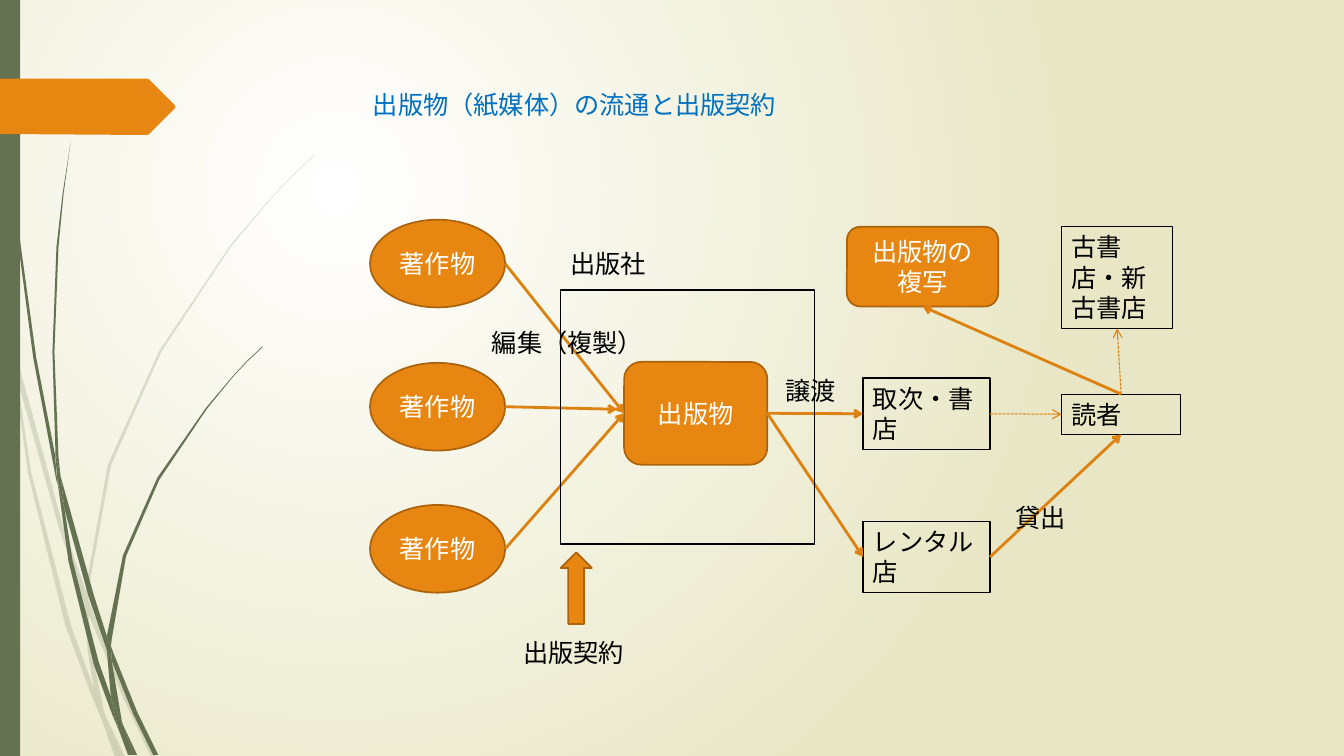
from dataclasses import dataclass
from typing import Optional

import pptx
import pptx.dml.color
import pptx.enum.lang
import pptx.enum.shapes
import pptx.enum.text
import pptx.oxml
import pptx.oxml.ns
import pptx.util

PX = 9144  # EMU per px, 100 px to the inch
FONT = "League Spartan"
GREEN, ORANGE, RUST, ARROW = "647252", "E78712", "AB640D", "DD8111"
BLACK, WHITE, BLUE = "000000", "FFFFFF", "0070C0"
SHAPE = pptx.enum.shapes.MSO_SHAPE
TOP, LEFT, BOTTOM, RIGHT = range(4)
Points = list[tuple[int, int]]


@dataclass
class Node:
    key: str
    text: str
    at: tuple[int, int, int, int]
    kind: Optional[SHAPE] = None  # None gives an outlined text box


@dataclass
class Link:
    start: str
    start_side: int
    end: str
    end_side: int
    dashed: bool = False
    stop: Optional[tuple[int, int]] = None  # free end short of the node


@dataclass
class Label:
    text: str
    at: tuple[int, int, int, int]
    color: str = BLACK


# Blades of grass, split into segments
PALE_BLADES: list[Points] = [
    [(11, 350), (9, 322), (0, 282), (0, 299), (10, 344)],
    [(58, 522), (84, 599), (85, 586), (62, 520), (14, 345), (17, 376)],
    [(92, 607), (88, 596), (88, 610), (123, 694), (150, 751), (155, 751), (127, 692)],
    [(119, 751), (124, 751), (105, 711)],
    [(93, 683), (70, 619), (31, 469), (17, 376), (11, 350), (28, 470), (65, 621),
     (92, 693), (101, 714), (99, 707)],
    [(84, 599), (87, 646), (93, 683), (96, 692), (105, 711), (103, 706), (91, 646),
     (88, 610), (88, 608)],
    [(88, 584), (110, 462), (160, 349), (229, 245), (268, 198), (290, 175), (312, 154),
     (312, 153), (289, 175), (268, 197), (228, 244), (158, 348), (107, 461), (85, 584),
     (85, 586), (88, 596)],
    [(101, 714), (114, 751), (119, 751)],
    [(88, 608), (88, 610), (88, 596), (85, 586), (84, 599)],
    [(96, 692), (93, 683), (99, 707), (101, 714), (119, 751), (105, 711)],
]
DARK_BLADES: list[Points] = [
    [(7, 110), (17, 233), (33, 355), (56, 477), (57, 481), (55, 457), (55, 453),
     (36, 355), (19, 232), (8, 109), (5, 48), (4, 0), (3, 0), (4, 48)],
    [(88, 592), (106, 645), (106, 633), (106, 631), (93, 590), (60, 472), (64, 505)],
    [(113, 649), (110, 641), (111, 656), (132, 708), (152, 749), (157, 749), (136, 706)],
    [(110, 691), (98, 657), (72, 556), (64, 505), (57, 477), (68, 557), (93, 659),
     (111, 708), (117, 722), (116, 717)],
    [(60, 472), (58, 453), (54, 349), (58, 245), (63, 193), (70, 141), (70, 141),
     (62, 193), (56, 245), (52, 349), (55, 449)],
    [(133, 749), (136, 749), (122, 719)],
    [(57, 477), (64, 505), (60, 472), (55, 449), (55, 453)],
    [(111, 633), (125, 552), (158, 476), (205, 406), (231, 374), (245, 359), (261, 344),
     (260, 344), (245, 358), (231, 373), (204, 405), (156, 474), (122, 551), (106, 631),
     (110, 641)],
    [(117, 722), (127, 749), (131, 749)],
    [(106, 645), (110, 691), (116, 706), (122, 719), (121, 716), (111, 656), (109, 651)],
    [(106, 645), (109, 651), (111, 656), (110, 641), (106, 631), (106, 633)],
    [(116, 706), (110, 691), (116, 717), (117, 722), (130, 749), (133, 749), (122, 719)],
]
PAGE_TAG: Points = [(0, 78), (146, 78), (148, 79), (173, 104), (174, 106), (173, 108),
                    (148, 133), (146, 134), (0, 133)]

NODES = [
    *(Node(f"work{i}", "著作物", (367, round(218 + 141.5 * i), 134, 87), SHAPE.OVAL)
      for i in range(3)),
    Node("publication", "出版物", (619, 359, 142, 102), SHAPE.ROUNDED_RECTANGLE),
    Node("bookshop", "取次・書店", (856, 375, 126, 71)),
    Node("reader", "読者", (1053, 391, 118, 40)),
    Node("used", "古書店・新古書店", (1053, 225, 110, 101)),
    Node("copying", "出版物の複写", (840, 225, 150, 79), SHAPE.ROUNDED_RECTANGLE),
    Node("rental", "レンタル店", (856, 517, 126, 71)),
]
LINKS = [
    Link("work0", RIGHT, "publication", LEFT),
    Link("work1", RIGHT, "publication", LEFT, stop=(612, 406)),
    Link("work2", RIGHT, "publication", LEFT),
    Link("publication", RIGHT, "bookshop", LEFT),
    Link("publication", RIGHT, "rental", LEFT),
    Link("bookshop", RIGHT, "reader", LEFT, dashed=True),
    Link("rental", RIGHT, "reader", BOTTOM),
    Link("reader", TOP, "used", BOTTOM, dashed=True),
    Link("reader", TOP, "copying", BOTTOM),
]
LABELS = [
    Label("編集（複製）", (478, 320, 181, 40)),
    Label("譲渡", (769, 367, 87, 40)),
    Label("貸出", (997, 493, 126, 40)),
    Label("出版契約", (509, 627, 165, 40)),
    Label("出版社", (556, 241, 157, 40)),
    Label("出版物（紙媒体）の流通と出版契約", (360, 84, 535, 40), BLUE),
]


def rgb(color: str) -> pptx.dml.color.RGBColor:
    return pptx.dml.color.RGBColor.from_string(color)


def emu(lengths: tuple[int, ...]) -> list[int]:
    return [length * PX for length in lengths]


def paint(shape, fill: Optional[str], line: Optional[str], width: float = 1.25) -> None:
    shape.shadow.inherit = False
    for part, color in ((shape.fill, fill), (shape.line.fill, line)):
        if color is None:
            part.background()
        else:
            part.solid()
            part.fore_color.rgb = rgb(color)
    if line is not None:
        shape.line.width = pptx.util.Pt(width)


def write(shape, text: str, *, color: str, centered: bool = False) -> None:
    frame = shape.text_frame
    frame.word_wrap = True
    paragraph = frame.paragraphs[0]
    if centered:
        frame.vertical_anchor = pptx.enum.text.MSO_ANCHOR.MIDDLE
        paragraph.alignment = pptx.enum.text.PP_ALIGN.CENTER
    else:
        frame.auto_size = pptx.enum.text.MSO_AUTO_SIZE.SHAPE_TO_FIT_TEXT
    run = paragraph.add_run()
    run.text = text
    run.font.size = pptx.util.Pt(18)
    run.font.color.rgb = rgb(color)
    run.font.name = FONT
    run.font.language_id = pptx.enum.lang.MSO_LANGUAGE_ID.JAPANESE
    east_asian = pptx.oxml.parse_xml(f'<a:ea {pptx.oxml.ns.nsdecls("a")} typeface="{FONT}"/>')
    run.font._element.append(east_asian)


def draw_outline(shapes, points: Points, color: str, alpha: int = 100) -> None:
    builder = shapes.build_freeform(*points[0], scale=PX)
    builder.add_line_segments(points[1:])
    outline = builder.convert_to_shape()
    paint(outline, color, None)
    if alpha < 100:
        tint = outline._element.spPr.find(".//" + pptx.oxml.ns.qn("a:srgbClr"))
        tint.append(pptx.oxml.parse_xml(
            f'<a:alpha {pptx.oxml.ns.nsdecls("a")} val="{alpha * 1000}"/>'))


def draw_node(shapes, node: Node):
    if node.kind is None:
        shape = shapes.add_textbox(*emu(node.at))
        shape.line.color.rgb = rgb(BLACK)
        shape.line.width = pptx.util.Pt(0.75)
        write(shape, node.text, color=BLACK)
    else:
        shape = shapes.add_shape(node.kind, *emu(node.at))
        paint(shape, ORANGE, RUST)
        write(shape, node.text, color=WHITE, centered=True)
    return shape


def draw_link(shapes, link: Link, drawn: dict) -> None:
    start, end = drawn[link.start], drawn[link.end]
    # Works start at their right edge; other starts are set by joining
    begin = (start.left + start.width, start.top + start.height // 2)
    stop = emu(link.stop) if link.stop else (end.left, end.top)
    arrow = shapes.add_connector(pptx.enum.shapes.MSO_CONNECTOR.STRAIGHT, *begin, *stop)
    if not link.start.startswith("work"):
        arrow.begin_connect(start, link.start_side)
    if link.stop is None:
        arrow.end_connect(end, link.end_side)
    arrow.line.color.rgb = rgb(ARROW)
    arrow.line.width = pptx.util.Pt(0.75 if link.dashed else 2)
    ns = pptx.oxml.ns.nsdecls("a")
    line = arrow.line._get_or_add_ln()
    if link.dashed:
        line.append(pptx.oxml.parse_xml(f'<a:prstDash {ns} val="sysDash"/>'))
    line.append(pptx.oxml.parse_xml(f'<a:tailEnd {ns} type="arrow"/>'))
    arrow._element.spPr.append(pptx.oxml.parse_xml(f"<a:effectLst {ns}/>"))


def draw_background(slide) -> None:
    fill = slide.background.fill
    fill.gradient()
    for stop, color in zip(fill.gradient_stops, (WHITE, "E8E6C4")):
        stop.color.rgb = rgb(color)
    linear = slide._element.find(".//" + pptx.oxml.ns.qn("a:lin"))
    linear.getparent().replace(linear, pptx.oxml.parse_xml(
        f'<a:path {pptx.oxml.ns.nsdecls("a")} path="circle">'
        '<a:fillToRect l="50000" t="50000" r="100000" b="100000"/></a:path>'))


def main() -> None:
    deck = pptx.Presentation()
    deck.slide_width, deck.slide_height = emu((1333, 750))
    slide = deck.slides.add_slide(deck.slide_layouts[6])
    shapes = slide.shapes

    # Backdrop
    draw_background(slide)
    for blades, alpha in ((PALE_BLADES, 20), (DARK_BLADES, 100)):
        group = shapes.add_group_shape()
        for blade in blades:
            draw_outline(group.shapes, blade, GREEN, alpha)
    paint(shapes.add_shape(SHAPE.RECTANGLE, *emu((0, 0, 20, 750))), GREEN, None)
    draw_outline(shapes, PAGE_TAG, ORANGE)

    # Distribution flow
    drawn = {node.key: draw_node(shapes, node) for node in NODES}
    for link in LINKS:
        draw_link(shapes, link, drawn)

    # Publisher frame and contract arrow
    paint(shapes.add_shape(SHAPE.UP_ARROW, *emu((556, 548, 31, 71))), ORANGE, RUST)
    paint(shapes.add_shape(SHAPE.RECTANGLE, *emu((556, 288, 252, 252))), None, BLACK)

    # Title and labels
    for label in LABELS:
        write(shapes.add_textbox(*emu(label.at)), label.text, color=label.color)

    deck.save("out.pptx")


if __name__ == "__main__":
    main()
